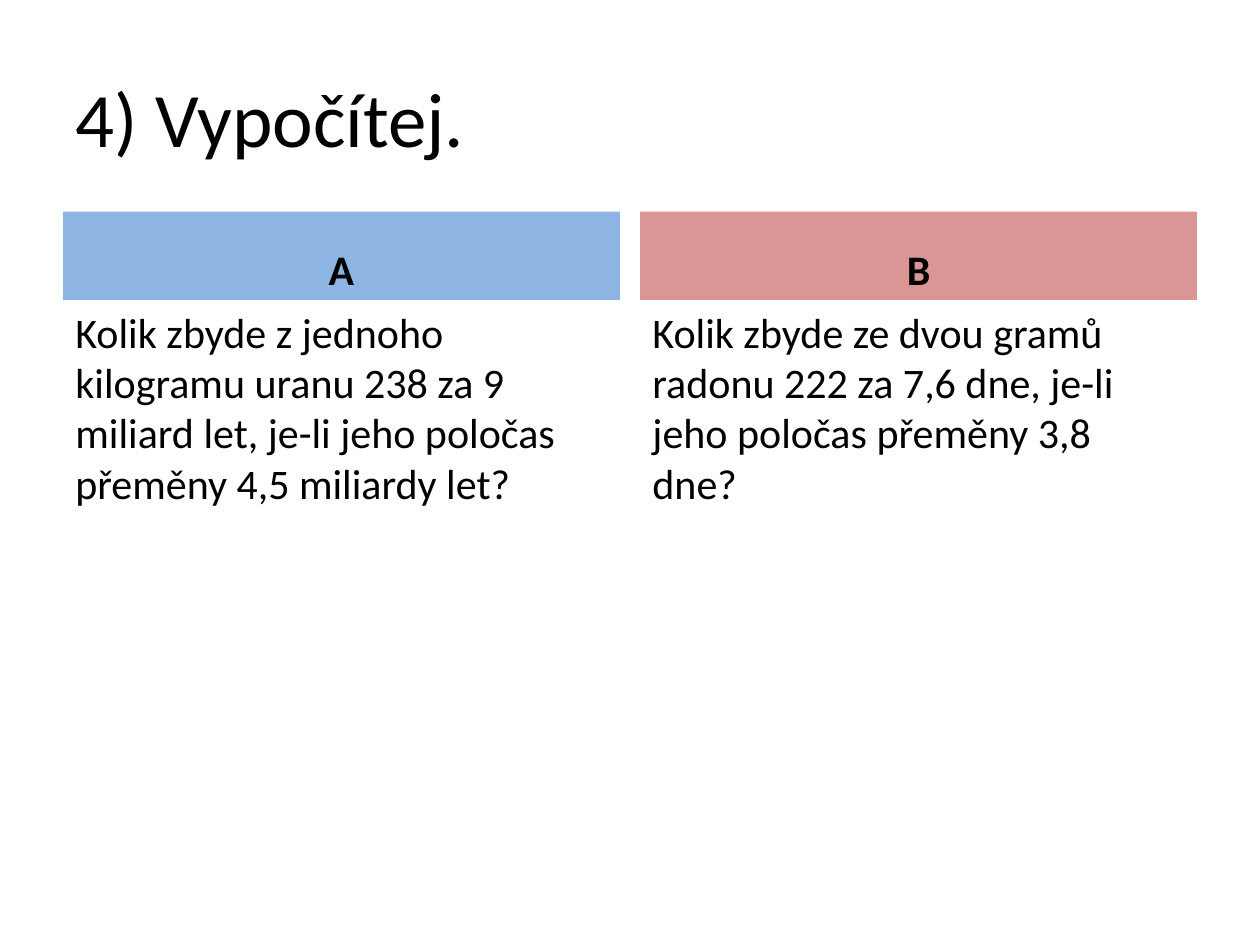
from pptx import Presentation
from pptx.dml.color import RGBColor
from pptx.enum.shapes import MSO_SHAPE as Kind
from pptx.enum.text import MSO_ANCHOR as Anchor, PP_ALIGN as Align
from pptx.util import Pt

BLACK = RGBColor(0x00, 0x00, 0x00)
BLUE = RGBColor(0x8E, 0xB4, 0xE3)
ROSE = RGBColor(0xD9, 0x96, 0x94)

LEFT, WIDTH, GAP = 36, 648, 11.5
TOP, HEIGHT, HEAD = 121, 361.4, 50.4

TASKS = [
    ("A", BLUE, "Kolik zbyde z jednoho kilogramu uranu 238 za 9 miliard let, "
                "je-li jeho poločas přeměny 4,5 miliardy let?"),
    ("B", ROSE, "Kolik zbyde ze dvou gramů radonu 222 za 7,6 dne, "
                "je-li jeho poločas přeměny 3,8 dne?"),
]


def write(shape, text, size, anchor, align=Align.LEFT, bold=False):
    frame = shape.text_frame
    frame.word_wrap = True
    frame.vertical_anchor = anchor
    para = frame.paragraphs[0]
    para.alignment = align
    run = para.add_run()
    run.text = text
    font = run.font
    font.name, font.size, font.bold = "Calibri", Pt(size), bold
    font.color.rgb = BLACK


def add_title(slide, text, x, y, w, h):
    box = slide.shapes.add_textbox(Pt(x), Pt(y), Pt(w), Pt(h))
    write(box, text, 44, Anchor.MIDDLE)


def add_task(slide, task, x, y, w, h):
    """Place a coloured heading bar with the question below it."""
    name, color, text = task
    bar = slide.shapes.add_shape(Kind.RECTANGLE, Pt(x), Pt(y), Pt(w), Pt(HEAD))
    bar.shadow.inherit = False
    bar.fill.solid()
    bar.fill.fore_color.rgb = color
    bar.line.fill.background()
    write(bar, name, 24, Anchor.BOTTOM, Align.CENTER, True)
    body = slide.shapes.add_textbox(Pt(x), Pt(y + HEAD), Pt(w), Pt(h - HEAD))
    write(body, text, 24, Anchor.TOP)


def main():
    deck = Presentation()
    deck.slide_width, deck.slide_height = Pt(720), Pt(540)
    slide = deck.slides.add_slide(deck.slide_layouts[6])
    add_title(slide, "4) Vypočítej.", LEFT, 21.6, WIDTH, 90)
    col = (WIDTH - GAP) / len(TASKS)
    for i, task in enumerate(TASKS):
        add_task(slide, task, LEFT + i * (col + GAP), TOP, col, HEIGHT)
    deck.save("out.pptx")


if __name__ == "__main__":
    main()
